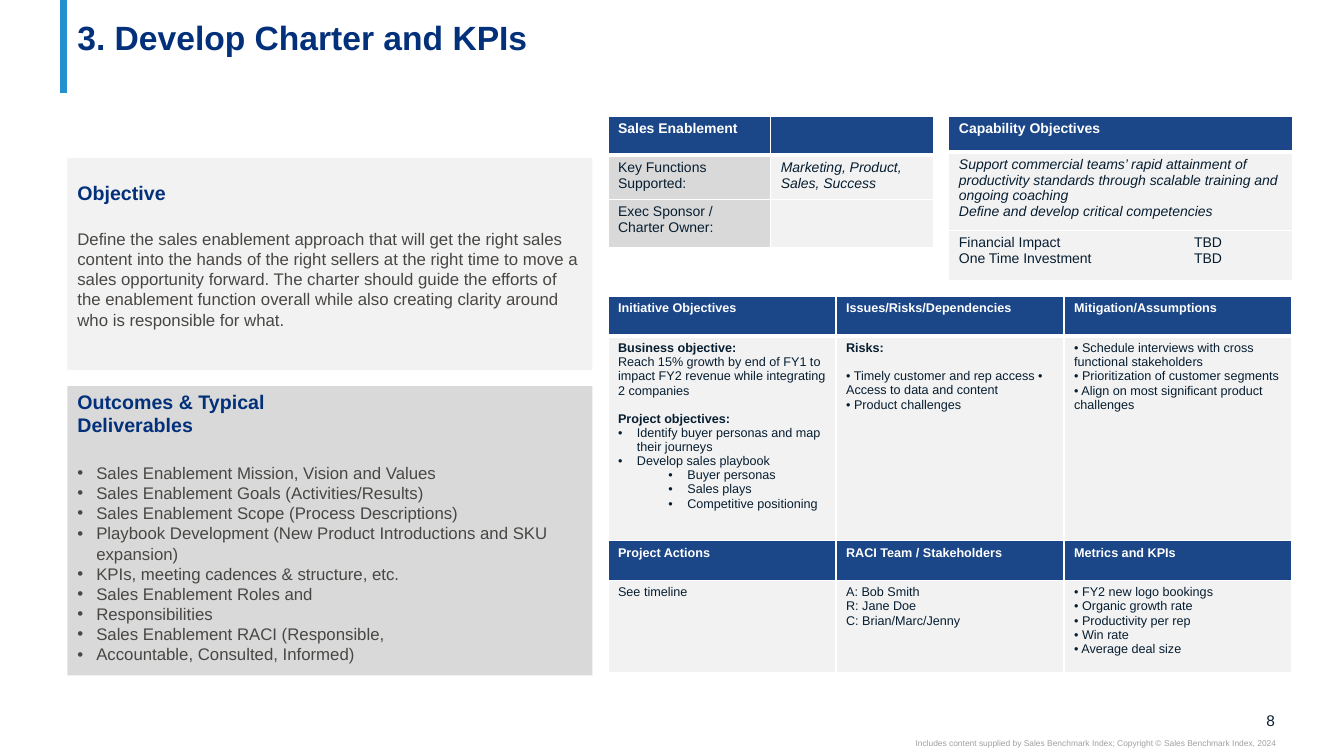
from collections import namedtuple
from pptx import Presentation
from pptx.dml.color import RGBColor
from pptx.enum.shapes import MSO_CONNECTOR, MSO_SHAPE
from pptx.enum.text import MSO_ANCHOR, PP_ALIGN
from pptx.oxml.ns import qn
from pptx.util import Pt
from lxml.etree import SubElement, Element

WHITE = RGBColor(0xFF, 0xFF, 0xFF)
NAVY = RGBColor(0x02, 0x30, 0x7A)
HEAD = RGBColor(0x03, 0x32, 0x7C)
SKY = RGBColor(0x23, 0x91, 0xCF)
INK = RGBColor(0x07, 0x1E, 0x31)
GREY = RGBColor(0x49, 0x47, 0x44)
PALE = RGBColor(0xF2, 0xF2, 0xF2)
MID = RGBColor(0xD9, 0xD9, 0xD9)
FAINT = RGBColor(0xA0, 0xA0, 0xA0)

Line = namedtuple("Line", "text size color bold italic gap left tab",
                  defaults=(12, INK, False, False, 0, 0, 0))

GOAL = ("Define the sales enablement approach that will get the right sales content "
        "into the hands of the right sellers at the right time to move a sales "
        "opportunity forward. The charter should guide the efforts of the enablement "
        "function overall while also creating clarity around who is responsible for what.")
ITEMS = [
    "Sales Enablement Mission, Vision and Values",
    "Sales Enablement Goals (Activities/Results)",
    "Sales Enablement Scope (Process Descriptions)",
    "Playbook Development (New Product Introductions and SKU expansion)",
    "KPIs, meeting cadences & structure, etc.",
    "Sales Enablement Roles and",
    "Responsibilities",
    "Sales Enablement RACI (Responsible,",
    "Accountable, Consulted, Informed)",
]


def add_bullet(par, left):
    props = par._p.get_or_add_pPr()
    props.set("marL", str(Pt(left)))
    props.set("indent", str(Pt(-13.5)))
    SubElement(props, qn("a:buFont"), typeface="Arial")
    SubElement(props, qn("a:buChar"), char="•")


def add_tab(par, stop):
    tabs = SubElement(par._p.get_or_add_pPr(), qn("a:tabLst"))
    SubElement(tabs, qn("a:tab"), pos=str(Pt(stop)), algn="l")


def write(frame, lines, align=PP_ALIGN.LEFT):
    frame.word_wrap = True
    for num, line in enumerate(lines):
        par = frame.paragraphs[0] if num == 0 else frame.add_paragraph()
        par.alignment = align
        if line.gap:
            par.space_before = Pt(line.gap)
        if line.left:
            add_bullet(par, line.left)
        if line.tab:
            add_tab(par, line.tab)
        par.font.size = Pt(line.size)
        if line.text:
            run = par.add_run()
            run.text = line.text
            font = run.font
            font.name, font.size = "Arial", Pt(line.size)
            font.bold, font.italic = line.bold, line.italic
            font.color.rgb = line.color


def add_text(slide, box, lines, align=PP_ALIGN.LEFT, inset=None, anchor=MSO_ANCHOR.TOP):
    frame = slide.shapes.add_textbox(*map(Pt, box)).text_frame
    if inset:
        (frame.margin_left, frame.margin_top,
         frame.margin_right, frame.margin_bottom) = map(Pt, inset)
    frame.vertical_anchor = anchor
    write(frame, lines, align)


def add_panel(slide, box, fill):
    panel = slide.shapes.add_shape(MSO_SHAPE.RECTANGLE, *map(Pt, box))
    panel.shadow.inherit = False
    panel.fill.solid()
    panel.fill.fore_color.rgb = fill
    panel.line.fill.background()


def add_bar(slide, x, top, end):
    bar = slide.shapes.add_connector(MSO_CONNECTOR.STRAIGHT, Pt(x), Pt(top), Pt(x), Pt(end))
    bar.line.color.rgb = SKY
    bar.line.width = Pt(5)
    SubElement(bar._element.spPr, qn("a:effectLst"))


def set_edges(cell, row):
    props = cell._tc.get_or_add_tcPr()
    wide = {"T": 3 if row == 1 else 1, "B": 3 if row == 0 else 1}
    for spot, side in enumerate("LRTB"):
        edge = Element(qn("a:ln" + side), w=str(Pt(wide.get(side, 1))))
        paint = SubElement(edge, qn("a:solidFill"))
        SubElement(paint, qn("a:srgbClr"), val=str(WHITE))
        props.insert(spot, edge)


def set_fill(cell, color):
    cell.fill.solid()
    cell.fill.fore_color.rgb = color
    if color == HEAD:
        tint = cell._tc.tcPr.find(".//" + qn("a:srgbClr"))
        SubElement(tint, qn("a:alpha"), val="90000")


def add_grid(slide, box, highs, rows, heads=(0,), side=PALE):
    wide = len(rows[0])
    grid = slide.shapes.add_table(len(rows), wide, *map(Pt, box)).table
    for col in grid.columns:
        col.width = Pt(box[2] / wide)
    for num, (high, row) in enumerate(zip(highs, rows)):
        grid.rows[num].height = Pt(high)
        for spot, lines in enumerate(row):
            cell = grid.cell(num, spot)
            body = side if spot == 0 else PALE
            set_fill(cell, HEAD if num in heads else body)
            set_edges(cell, num)
            write(cell.text_frame, lines)


def heads(size, *names):
    return [[Line(name, size, WHITE, True)] for name in names]


def plain(size, *texts, **style):
    return [Line(text, size, **style) for text in texts]


def add_brief(slide):
    add_panel(slide, (48.2, 113, 375, 151.2), PALE)
    add_panel(slide, (48.2, 275.8, 375, 206.6), MID)
    lines = [
        Line("Objective", 14, NAVY, True),
        Line(GOAL, color=GREY, gap=17),
        Line("Outcomes & Typical", 14, NAVY, True, gap=43),
        Line("Deliverables", 14, NAVY, True),
    ]
    lines += [Line(item, color=GREY, left=13.5, gap=0 if num else 18.5)
              for num, item in enumerate(ITEMS)]
    add_text(slide, (48.2, 126, 375, 356.4), lines)


def add_plan(slide):
    aims = [
        Line("Business objective:", 9, bold=True),
        Line("Reach 15% growth by end of FY1 to impact FY2 revenue while "
             "integrating 2 companies", 9),
        Line("Project objectives:", 9, bold=True, gap=10),
        *plain(9, "Identify buyer personas and map their journeys",
               "Develop sales playbook", left=13.5),
        *plain(9, "Buyer personas", "Sales plays", "Competitive positioning", left=49.5),
    ]
    risks = [
        Line("Risks:", 9, bold=True),
        Line("• Timely customer and rep access • Access to data and content", 9, gap=10),
        Line("• Product challenges", 9),
    ]
    steps = plain(9, "• Schedule interviews with cross functional stakeholders",
                  "• Prioritization of customer segments",
                  "• Align on most significant product", "challenges")
    team = plain(9, "A: Bob Smith", "R: Jane Doe", "C: Brian/Marc/Jenny")
    marks = plain(9, "• FY2 new logo bookings", "• Organic growth rate",
                  "• Productivity per rep", "• Win rate", "• Average deal size")
    add_grid(slide, (434.3, 211.8, 488.7, 269), (28.4, 146, 28.4, 66.2), [
        heads(9, "Initiative Objectives", "Issues/Risks/Dependencies", "Mitigation/Assumptions"),
        [aims, risks, steps],
        heads(9, "Project Actions", "RACI Team / Stakeholders", "Metrics and KPIs"),
        [plain(9, "See timeline"), team, marks],
    ], (0, 2))


def add_scope(slide):
    add_grid(slide, (434.3, 83, 232.4, 94), (27.7, 31.7, 34.6), [
        heads(10, "Sales Enablement", ""),
        [plain(10, "Key Functions Supported:"),
         plain(10, "Marketing, Product, Sales, Success", italic=True)],
        [plain(10, "Exec Sponsor / Charter Owner:"), plain(10, "")],
    ], side=MID)
    add_grid(slide, (677.8, 83, 245.2, 117.4), (25.4, 56, 36), [
        heads(10, "Capability Objectives"),
        [plain(10, "Support commercial teams’ rapid attainment of productivity "
               "standards through scalable training and ongoing coaching",
               "Define and develop critical competencies", italic=True)],
        [plain(10, "Financial Impact\tTBD", "One Time Investment\tTBD", tab=168)],
    ])


def main():
    deck = Presentation()
    deck.slide_width, deck.slide_height = Pt(960), Pt(540)
    slide = deck.slides.add_slide(deck.slide_layouts[6])
    add_bar(slide, 45.4, 0, 66.2)
    add_text(slide, (887, 507.6, 23.8, 13.7), [Line("8", 11)],
             PP_ALIGN.RIGHT, (0, 0, 0, 0), MSO_ANCHOR.MIDDLE)
    add_text(slide, (540, 527, 371.5, 7.2),
             [Line("Includes content supplied by Sales Benchmark Index; "
                   "Copyright © Sales Benchmark Index, 2024", 6, FAINT)],
             PP_ALIGN.RIGHT, (0, 0, 0, 0))
    add_text(slide, (48.2, 4.3, 863.3, 60.5),
             [Line("3. Develop Charter and KPIs", 24, NAVY, True)], inset=(7.2, 8, 7.2, 0))
    add_brief(slide)
    add_plan(slide)
    add_scope(slide)
    deck.save("out.pptx")


if __name__ == "__main__":
    main()
